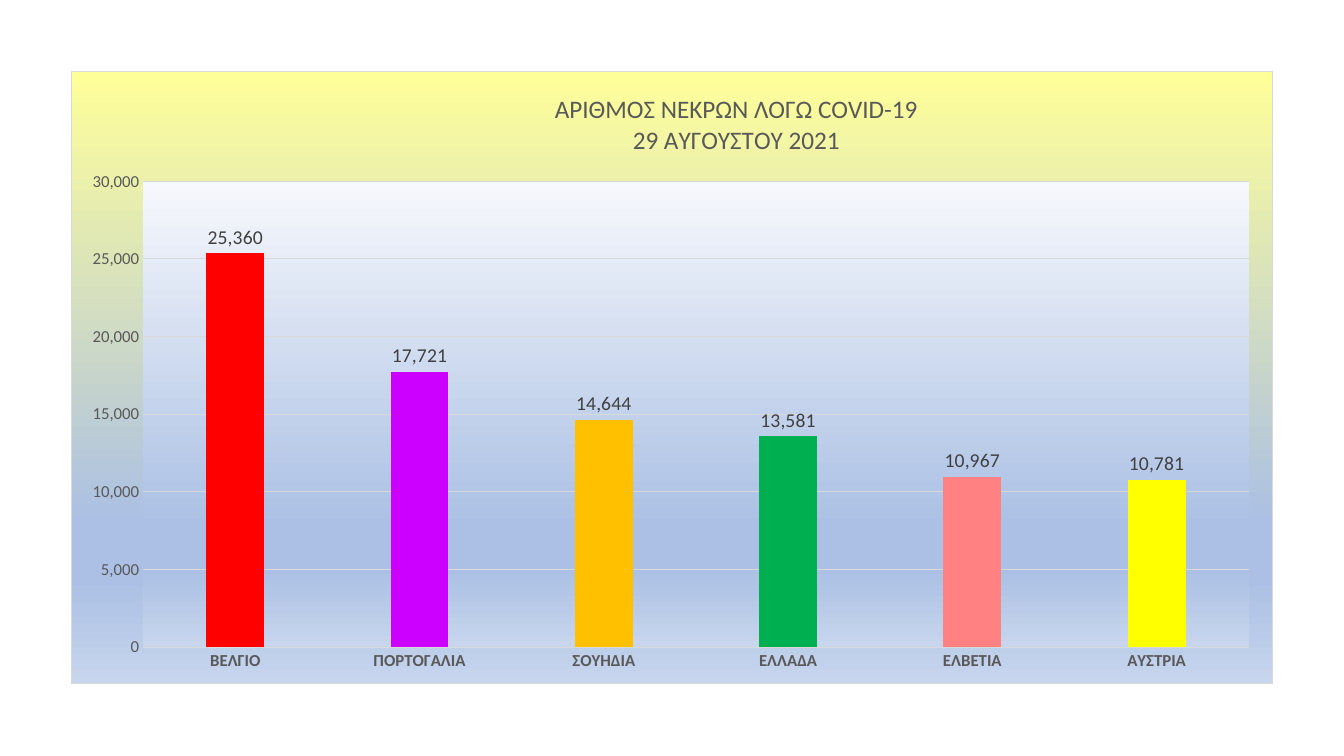
from lxml import etree
from pptx import Presentation
from pptx.chart.data import CategoryChartData
from pptx.dml.color import RGBColor
from pptx.enum.chart import XL_CHART_TYPE as ChartType, XL_LABEL_POSITION as LabelPos
from pptx.enum.chart import XL_TICK_MARK as TickMark
from pptx.enum.text import PP_ALIGN
from pptx.oxml import parse_xml
from pptx.oxml.ns import nsdecls, qn
from pptx.util import Inches, Pt

COLORS = {"text": "595959", "label": "404040", "line": "D9D9D9",
          "chart_top": "FFFF99", "plot_top": "F6F8FC",
          "mid": "ABC0E4", "bottom": "C7D5ED"}
DEATHS = [("ΒΕΛΓΙΟ", 25360, "FF0000"), ("ΠΟΡΤΟΓΑΛΙΑ", 17721, "CC00FF"),
          ("ΣΟΥΗΔΙΑ", 14644, "FFC000"), ("ΕΛΛΑΔΑ", 13581, "00B050"),
          ("ΕΛΒΕΤΙΑ", 10967, "FF8181"), ("ΑΥΣΤΡΙΑ", 10781, "FFFF00")]
TITLE = ["ΑΡΙΘΜΟΣ ΝΕΚΡΩΝ ΛΟΓΩ COVID-19", "29 ΑΥΓΟΥΣΤΟΥ 2021"]


def gradient_props(top, line):
    """Return a c:spPr with a downward gradient and the given a:ln content."""
    stops = [(0, top), (74, COLORS["mid"]), (83, COLORS["mid"]), (100, COLORS["bottom"])]
    gs = "".join(f'<a:gs pos="{pos * 1000}"><a:srgbClr val="{c}"/></a:gs>' for pos, c in stops)
    return parse_xml(
        f'<c:spPr {nsdecls("c", "a")}><a:gradFill rotWithShape="1"><a:gsLst>{gs}</a:gsLst>'
        f'<a:lin ang="5400000" scaled="0"/></a:gradFill><a:ln w="9525">{line}</a:ln></c:spPr>')


def place(el, index, **shares):
    """Give a chart part a manual layout in shares of the chart's size."""
    for old in el.findall(qn("c:layout")):
        el.remove(old)
    layout = etree.Element(qn("c:layout"))
    manual = etree.SubElement(layout, qn("c:manualLayout"))
    if "w" in shares:
        etree.SubElement(manual, qn("c:layoutTarget")).set("val", "inner")
    for name in ("xMode", "yMode"):
        etree.SubElement(manual, qn(f"c:{name}")).set("val", "edge")
    for name, share in shares.items():
        etree.SubElement(manual, qn(f"c:{name}")).set("val", str(share))
    el.insert(index, layout)


prs = Presentation()
prs.slide_width, prs.slide_height = Inches(13.33), Inches(7.5)
s = prs.slides.add_slide(prs.slide_layouts[6])

data = CategoryChartData(number_format="#,##0")
data.categories = [country for country, _, _ in DEATHS]
data.add_series("Series 1", [count for _, count, _ in DEATHS])
chart = s.shapes.add_chart(ChartType.COLUMN_CLUSTERED, Inches(0.7), Inches(0.7),
                           Inches(11.93), Inches(6.09), data).chart
chart.has_legend = False
chart.font.name, chart.font.size = "Calibri", Pt(10)

# Title
tf = chart.chart_title.text_frame
for i, line in enumerate(TITLE):
    p = tf.paragraphs[0] if i == 0 else tf.add_paragraph()
    p.alignment = PP_ALIGN.CENTER
    r = p.add_run()
    r.text = line
    r.font.name, r.font.size, r.font.bold = "Calibri", Pt(18), False
    r.font.color.rgb = RGBColor.from_string(COLORS["text"])

# Columns and their labels
plot = chart.plots[0]
plot.gap_width, plot.overlap, plot.vary_by_categories = 219, -27, False
series = plot.series[0]
for i, (_, _, color) in enumerate(DEATHS):
    fill = series.points[i].format.fill
    fill.solid()
    fill.fore_color.rgb = RGBColor.from_string(color)
labels = series.data_labels
labels.show_value, labels.position = True, LabelPos.OUTSIDE_END
labels.number_format, labels.number_format_is_linked = "#,##0", False
labels.font.name, labels.font.size = "Calibri", Pt(14)
labels.font.color.rgb = RGBColor.from_string(COLORS["label"])

# Axes
cat, val = chart.category_axis, chart.value_axis
for axis in (cat, val):
    axis.major_tick_mark = axis.minor_tick_mark = TickMark.NONE
    font = axis.tick_labels.font
    font.name, font.size, font.bold = "Calibri", Pt(12), axis is cat
    font.color.rgb = RGBColor.from_string(COLORS["text"])
val.minimum_scale, val.maximum_scale, val.major_unit = 0, 30000, 5000
val.tick_labels.number_format, val.tick_labels.number_format_is_linked = "#,##0", False
val.format.line.fill.background()
val.has_major_gridlines = True
for ln in (cat.format.line, val.major_gridlines.format.line):
    ln.width = Pt(0.75)
    ln.color.rgb = RGBColor.from_string(COLORS["line"])

# Backgrounds and layout
root = chart.element if hasattr(chart, "element") else chart._chartSpace
area = root.find(qn("c:chart"))
plot_area = area.find(qn("c:plotArea"))
border = f'<a:solidFill><a:srgbClr val="{COLORS["line"]}"/></a:solidFill>'
area.addnext(gradient_props(COLORS["chart_top"], border))
plot_area.append(gradient_props(COLORS["plot_top"], "<a:noFill/>"))
place(area.find(qn("c:title")), 1, x=0.4, y=0.03)
place(plot_area, 0, x=0.06, y=0.18, w=0.92, h=0.76)

prs.save("out.pptx")
